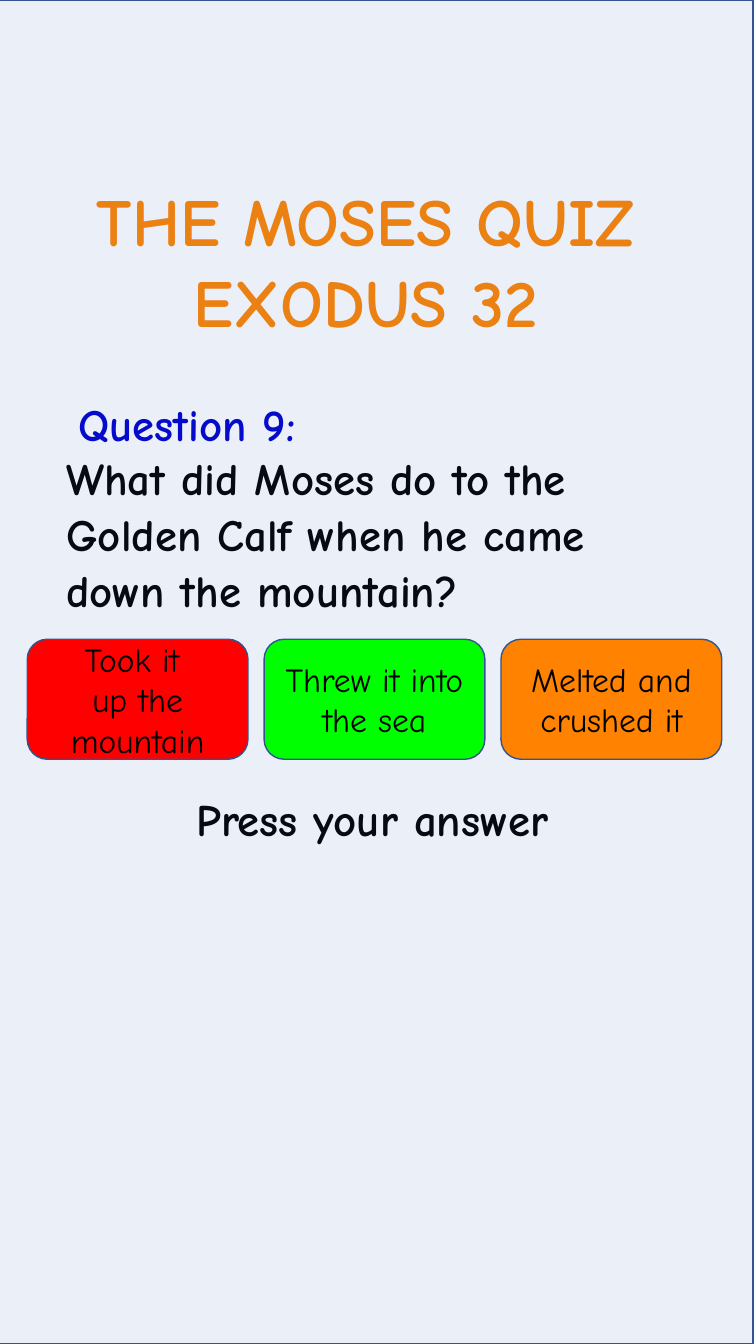
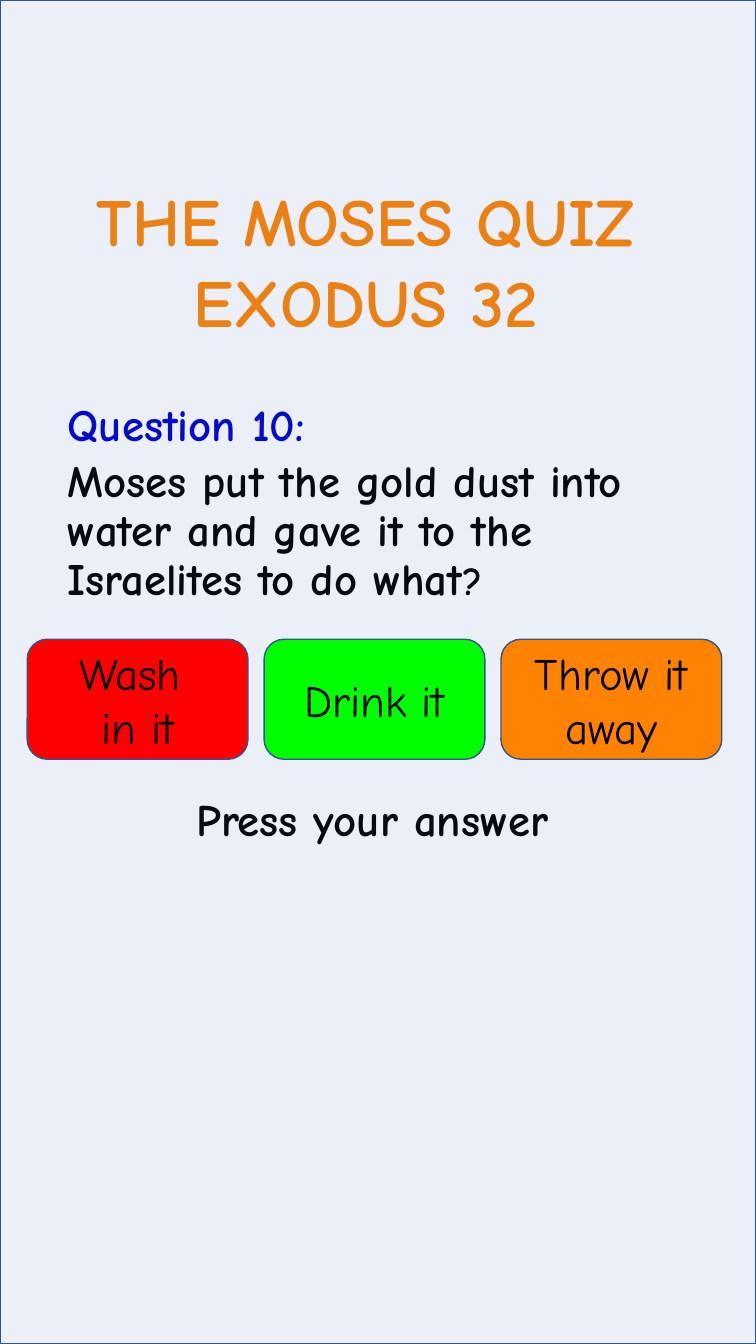
import pptx
import pptx.util
import pptx.dml.color
import pptx.enum.shapes
import pptx.enum.text
import pptx.oxml
import pptx.oxml.ns
from dataclasses import dataclass

SCALE = 9144
SLIDE_SIZE = (750, 1333)
TITLE_LINES = ["THE MOSES QUIZ ", "EXODUS 32 "]
TITLE_AREA = (30, 173, 689, 172)
PROMPT = "Press your answer"
PROMPT_AREA = (185, 786, 422, 72)
ANSWER_AREA = (27, 634, 219, 119)
ANSWER_PITCH = 235

QUESTIONS = [
    {
        "label": "Question 9:",
        "label_area": (47, 389, 277, 64),
        "question": [("What did Moses do to the Golden Calf when he came down the mountain?", 32)],
        "question_area": (56, 440, 636, 193),
        "leading": 40,
        "answers": [["Took it ", "up the mountain"], ["Threw it into the sea"], ["Melted and crushed it"]],
        "answer_size": 24,
        "tint_left": -3,
    },
    {
        "label": "Question 10:",
        "label_area": (33, 389, 304, 64),
        "question": [
            ("Moses put the gold dust into water and gave it to the Israelites to do what", 32),
            ("?", 28),
        ],
        "question_area": (57, 449, 660, 168),
        "leading": 35,
        "answers": [["Wash ", "in it"], ["Drink it"], ["Throw it away"]],
        "answer_size": 32,
        "tint_left": 0,
    },
]


@dataclass(frozen=True)
class Theme:
    font: str = "Comic Neue"
    title: str = "FF8200"
    title_edge: str = "FF0000"
    label: str = "0000CC"
    text: str = "000000"
    tint: str = "4472C4"
    tint_alpha: int = 10
    border: str = "325491"
    answers: tuple = ("FF0000", "00FF00", "FF8200")
    title_size: int = 48
    body_size: int = 32
    title_edge_width: float = 1.06
    border_width: int = 1
    space_before: float = 7.5


THEME = Theme()
CENTER = pptx.enum.text.PP_ALIGN.CENTER
LEFT = pptx.enum.text.PP_ALIGN.LEFT
SHAPES = pptx.enum.shapes.MSO_SHAPE


def emu(area):
    return [length * SCALE for length in area]


def rgb(color):
    return pptx.dml.color.RGBColor.from_string(color)


def write(frame, lines, color, bold=True, align=LEFT, leading=None, before=0):
    spans = []
    for index, line in enumerate(lines):
        para = frame.paragraphs[0] if index == 0 else frame.add_paragraph()
        para.alignment = align
        para.space_before = pptx.util.Pt(before)
        if leading:
            para.line_spacing = leading
        for text, size in line:
            span = para.add_run()
            span.text = text
            span.font.name = THEME.font
            span.font.size = pptx.util.Pt(size)
            span.font.bold = bold
            span.font.color.rgb = rgb(color)
            spans.append(span)
    return spans


def fit_to_text(frame):
    frame.word_wrap = False
    frame.auto_size = pptx.enum.text.MSO_AUTO_SIZE.SHAPE_TO_FIT_TEXT
    frame.vertical_anchor = pptx.enum.text.MSO_ANCHOR.TOP


def outline(span):
    width = int(pptx.util.Pt(THEME.title_edge_width))
    edge = pptx.oxml.parse_xml(
        f'<a:ln {pptx.oxml.ns.nsdecls("a")} w="{width}"><a:solidFill>'
        f'<a:srgbClr val="{THEME.title_edge}"/></a:solidFill></a:ln>'
    )
    span.font._element.insert(0, edge)


def add_title(page):
    title = page.shapes.title
    title.left, title.top, title.width, title.height = emu(TITLE_AREA)
    fit_to_text(title.text_frame)
    lines = [[(line, THEME.title_size)] for line in TITLE_LINES]
    for span in write(title.text_frame, lines, THEME.title, align=CENTER):
        outline(span)


def add_text(page, area):
    frame = page.shapes.add_textbox(*emu(area)).text_frame
    frame.word_wrap = True
    return frame


def add_panel(page, kind, area, color):
    panel = page.shapes.add_shape(kind, *emu(area))
    panel.shadow.inherit = False
    panel.fill.solid()
    panel.fill.fore_color.rgb = rgb(color)
    panel.line.color.rgb = rgb(THEME.border)
    panel.line.width = pptx.util.Pt(THEME.border_width)
    return panel


def add_tint(page, left):
    tint = add_panel(page, SHAPES.RECTANGLE, (left, 0, *SLIDE_SIZE), THEME.tint)
    color = tint.fill._xPr.find(".//" + pptx.oxml.ns.qn("a:srgbClr"))
    alpha = pptx.oxml.parse_xml(
        f'<a:alpha {pptx.oxml.ns.nsdecls("a")} val="{THEME.tint_alpha * 1000}"/>'
    )
    color.append(alpha)


def add_answers(page, answers, size):
    left, top, width, height = ANSWER_AREA
    for index, (lines, color) in enumerate(zip(answers, THEME.answers)):
        area = (left + index * ANSWER_PITCH, top, width, height)
        button = add_panel(page, SHAPES.ROUNDED_RECTANGLE, area, color)
        button.text_frame.vertical_anchor = pptx.enum.text.MSO_ANCHOR.MIDDLE
        write(button.text_frame, [[(line, size)] for line in lines], THEME.text, bold=False, align=CENTER)


def add_question(deck, item):
    page = deck.slides.add_slide(deck.slide_layouts.get_by_name("Title Only"))
    add_title(page)
    label = add_text(page, item["label_area"])
    fit_to_text(label)
    write(label, [[(item["label"], THEME.body_size)]], THEME.label, align=CENTER)
    write(add_text(page, item["question_area"]), [item["question"]], THEME.text,
          leading=pptx.util.Pt(item["leading"]), before=THEME.space_before)
    write(add_text(page, PROMPT_AREA), [[(PROMPT, THEME.body_size)]], THEME.text,
          leading=0.9, before=THEME.space_before)
    add_tint(page, item["tint_left"])
    add_answers(page, item["answers"], item["answer_size"])


def main():
    deck = pptx.Presentation()
    deck.slide_width, deck.slide_height = emu(SLIDE_SIZE)
    for item in QUESTIONS:
        add_question(deck, item)
    deck.save("out.pptx")


if __name__ == "__main__":
    main()
